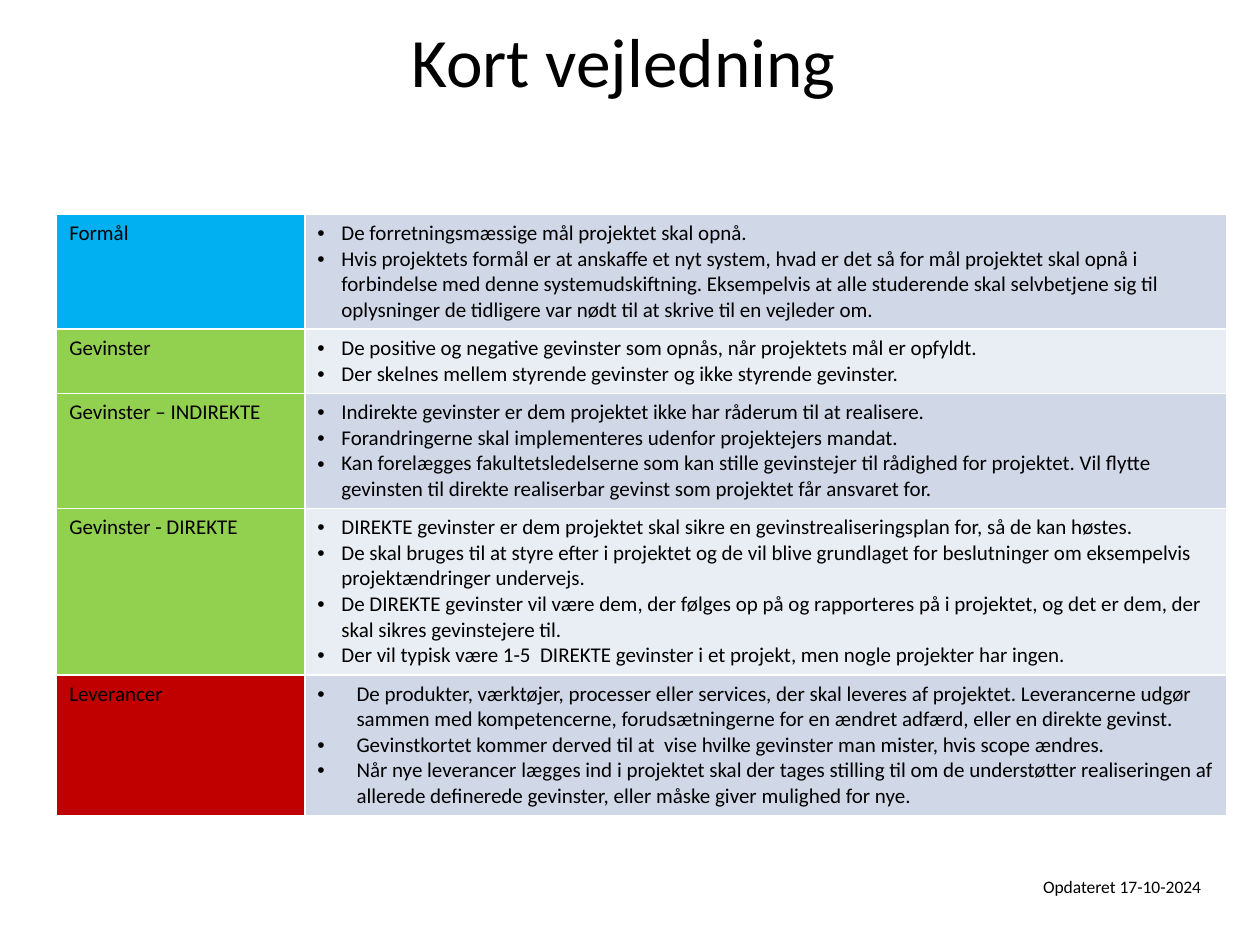
from lxml.etree import SubElement
from pptx import Presentation
from pptx.dml.color import RGBColor
from pptx.enum.text import MSO_ANCHOR, MSO_AUTO_SIZE, PP_ALIGN
from pptx.oxml.ns import qn
from pptx.util import Inches, Pt

BLACK = RGBColor(0x00, 0x00, 0x00)
WHITE = RGBColor(0xFF, 0xFF, 0xFF)
BLUE = RGBColor(0x00, 0xB0, 0xF0)
GREEN = RGBColor(0x92, 0xD0, 0x50)
RED = RGBColor(0xC0, 0x00, 0x00)
BANDS = (RGBColor(0xD0, 0xD8, 0xE8), RGBColor(0xE9, 0xED, 0xF4))

COLUMN_WIDTHS = (1.97, 7.32)
GUIDE = [
    ("Formål", BLUE, 0.91, 0.19, [
        "De forretningsmæssige mål projektet skal opnå.",
        "Hvis projektets formål er at anskaffe et nyt system, hvad er det så for mål projektet skal opnå i "
        "forbindelse med denne systemudskiftning. Eksempelvis at alle studerende skal selvbetjene sig til "
        "oplysninger de tidligere var nødt til at skrive til en vejleder om.",
    ]),
    ("Gevinster", GREEN, 0.51, 0.19, [
        "De positive og negative gevinster som opnås, når projektets mål er opfyldt.",
        "Der skelnes mellem styrende gevinster og ikke styrende gevinster.",
    ]),
    ("Gevinster – INDIREKTE", GREEN, 0.91, 0.19, [
        "Indirekte gevinster er dem projektet ikke har råderum til at realisere.",
        "Forandringerne skal implementeres udenfor projektejers mandat.",
        "Kan forelægges fakultetsledelserne som kan stille gevinstejer til rådighed for projektet. Vil flytte "
        "gevinsten til direkte realiserbar gevinst som projektet får ansvaret for.",
    ]),
    ("Gevinster - DIREKTE", GREEN, 1.32, 0.19, [
        "DIREKTE gevinster er dem projektet skal sikre en gevinstrealiseringsplan for, så de kan høstes.",
        "De skal bruges til at styre efter i projektet og de vil blive grundlaget for beslutninger om eksempelvis "
        "projektændringer undervejs.",
        "De DIREKTE gevinster vil være dem, der følges op på og rapporteres på i projektet, og det er dem, der "
        "skal sikres gevinstejere til.",
        "Der vil typisk være 1-5  DIREKTE gevinster i et projekt, men nogle projekter har ingen.",
    ]),
    ("Leverancer", RED, 1.12, 0.31, [
        "De produkter, værktøjer, processer eller services, der skal leveres af projektet. Leverancerne udgør "
        "sammen med kompetencerne, forudsætningerne for en ændret adfærd, eller en direkte gevinst.",
        "Gevinstkortet kommer derved til at  vise hvilke gevinster man mister, hvis scope ændres.",
        "Når nye leverancer lægges ind i projektet skal der tages stilling til om de understøtter realiseringen af "
        "allerede definerede gevinster, eller måske giver mulighed for nye.",
    ]),
]


def apply(target, values):
    for name, value in values.items():
        setattr(target, name, value)


def write(frame, lines, size):
    frame.text = "\n".join(lines)
    for paragraph in frame.paragraphs:
        for run in paragraph.runs:
            apply(run.font, {"name": "Calibri", "size": Pt(size), "bold": False})
            run.font.color.rgb = BLACK


def add_bullet(paragraph, indent):
    properties = paragraph._p.get_or_add_pPr()
    properties.set("marL", str(Inches(indent)))
    properties.set("indent", str(-Inches(indent)))
    SubElement(properties, qn("a:buFont"), typeface="Arial")
    SubElement(properties, qn("a:buChar"), char="•")


def paint_cell(cell, color):
    properties = cell._tc.get_or_add_tcPr()
    for side in ("lnL", "lnR", "lnT", "lnB"):
        border = SubElement(properties, qn(f"a:{side}"), w=str(Pt(1)))
        fill = SubElement(border, qn("a:solidFill"))
        SubElement(fill, qn("a:srgbClr"), val=str(WHITE))
    cell.fill.solid()
    cell.fill.fore_color.rgb = color


def place_title(slide, left, top, width, height):
    title = slide.shapes.title
    apply(title, {"left": left, "top": top, "width": width, "height": height})
    write(title.text_frame, ["Kort vejledning"], 39.6)
    apply(title.text_frame, {"vertical_anchor": MSO_ANCHOR.MIDDLE, "auto_size": MSO_AUTO_SIZE.NONE})
    title.text_frame.paragraphs[0].alignment = PP_ALIGN.CENTER


def place_guide(slide, left, top, width, height):
    guide = slide.shapes.add_table(len(GUIDE), len(COLUMN_WIDTHS), left, top, width, height).table
    apply(guide, {"first_row": False, "horz_banding": False})
    for column, share in zip(guide.columns, COLUMN_WIDTHS):
        column.width = int(width * share / sum(COLUMN_WIDTHS))
    for index, (term, color, row_height, indent, points) in enumerate(GUIDE):
        guide.rows[index].height = Inches(row_height)
        term_cell, points_cell = guide.rows[index].cells
        write(term_cell.text_frame, [term], 12)
        paint_cell(term_cell, color)
        write(points_cell.text_frame, points, 12)
        paint_cell(points_cell, BANDS[index % 2])
        for paragraph in points_cell.text_frame.paragraphs:
            add_bullet(paragraph, indent)


def place_updated(slide, left, top, width, height):
    updated = slide.shapes.add_textbox(left, top, width, height).text_frame
    apply(updated, {"word_wrap": True, "auto_size": MSO_AUTO_SIZE.SHAPE_TO_FIT_TEXT})
    write(updated, ["Opdateret 17-10-2024"], 10)


def main():
    presentation = Presentation()
    apply(presentation, {"slide_width": Inches(10), "slide_height": Inches(7.5)})
    slide = presentation.slides.add_slide(presentation.slide_layouts[5])
    place_title(slide, Inches(0.45), Inches(0.13), Inches(9), Inches(0.69))
    guide_height = sum(row[2] for row in GUIDE)
    place_guide(slide, Inches(0.45), Inches(1.7), Inches(sum(COLUMN_WIDTHS)), Inches(guide_height))
    place_updated(slide, Inches(8.18), Inches(6.9), Inches(1.57), Inches(0.27))
    presentation.save("out.pptx")


if __name__ == "__main__":
    main()
